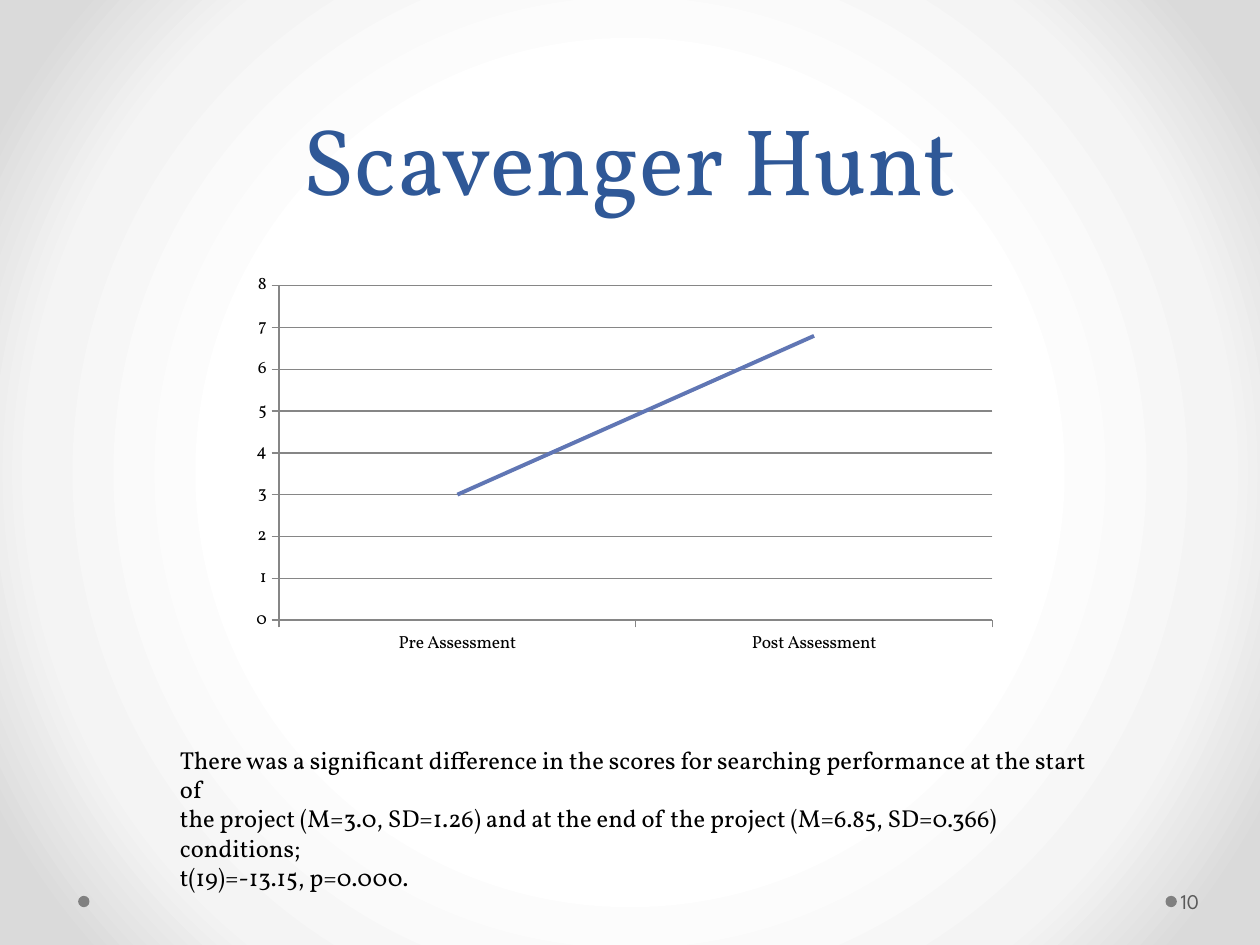
from lxml import etree
from pptx import Presentation
from pptx.chart.data import CategoryChartData
from pptx.dml.color import RGBColor
from pptx.enum.chart import XL_CHART_TYPE as CT, XL_TICK_MARK as TM
from pptx.enum.shapes import MSO_SHAPE as SH
from pptx.enum.text import MSO_ANCHOR as MA, PP_ALIGN as AL
from pptx.oxml import parse_xml
from pptx.oxml.ns import nsdecls, qn
from pptx.util import Inches, Pt

TITLE = "Scavenger Hunt"
FINDINGS = [
    "There was a significant difference in the scores for searching performance at the start of",
    "the project (M=3.0, SD=1.26) and at the end of the project (M=6.85, SD=0.366) conditions;",
    "t(19)=-13.15, p=0.000.",
]
PAGE = "10"
SCORES = {"Pre Assessment": 3, "Post Assessment": 6.8}
PLOT = {"x": 0.05, "y": 0.05, "w": 0.93, "h": 0.84}
BACKDROP = [(50, "FFFFFF"), (76, "F4F4F4"), (92, "DADADA")]
DOTS = [0.62, 9.25]
COLORS = {"title": "2F5897", "text": "000000", "page": "595959",
          "dot": "808080", "line": "6076B4", "axis": "868686"}
SERIF, SANS = "Vollkorn", "League Spartan"


def rgb(name):
    return RGBColor.from_string(COLORS[name])


def style(font, name, size, color):
    font.name, font.size = name, Pt(size)
    font.color.rgb = rgb(color)


def add_text(slide, box, lines, font, size, color, anchor=MA.TOP, align=AL.LEFT):
    tf = slide.shapes.add_textbox(*map(Inches, box)).text_frame
    tf.word_wrap, tf.vertical_anchor = True, anchor
    tf.text = "\n".join(lines)
    for p in tf.paragraphs:
        p.alignment = align
        for r in p.runs:
            style(r.font, font, size, color)
    return tf


def set_backdrop(slide):
    stops = "".join(f'<a:gs pos="{pos * 1000}"><a:srgbClr val="{c}"/></a:gs>'
                    for pos, c in BACKDROP)
    fill = slide.background.fill
    fill.gradient()
    old = slide.element.find(".//" + qn("a:gradFill"))
    old.getparent().replace(old, parse_xml(
        f'<a:gradFill {nsdecls("a")} rotWithShape="1"><a:gsLst>{stops}</a:gsLst>'
        '<a:path path="circle"><a:fillToRect l="50000" t="50000" r="50000" b="50000"/>'
        '</a:path></a:gradFill>'))


def add_score_chart(slide):
    data = CategoryChartData()
    data.categories = list(SCORES)
    data.add_series("Series 1", list(SCORES.values()))
    box = map(Inches, (1.91, 2.11, 6.09, 3.16))
    chart = slide.shapes.add_chart(CT.LINE, *box, data).chart
    chart.has_legend = chart.has_title = False
    style(chart.font, SERIF, 10, "text")

    plot = chart.plots[0]
    plot.vary_by_categories = False
    line = plot.series[0]
    line.smooth = False
    line.format.line.color.rgb = rgb("line")
    line.format.line.width = Pt(2.25)

    values = chart.value_axis
    values.minimum_scale, values.maximum_scale, values.major_unit = 0, 8, 1
    values.has_major_gridlines = True
    for axis in (chart.category_axis, values):
        axis.major_tick_mark, axis.minor_tick_mark = TM.OUTSIDE, TM.NONE
        axis.format.line.color.rgb = rgb("axis")
    values.major_gridlines.format.line.color.rgb = rgb("axis")

    area = chart.element.find(".//" + qn("c:plotArea"))
    layout = area.find(qn("c:layout"))
    if layout is None:
        layout = etree.Element(qn("c:layout"))
        area.insert(0, layout)
    manual = etree.SubElement(layout, qn("c:manualLayout"))
    settings = {"layoutTarget": "inner", "xMode": "edge", "yMode": "edge", **PLOT}
    for tag, val in settings.items():
        etree.SubElement(manual, qn("c:" + tag)).set("val", str(val))


def main():
    prs = Presentation()
    prs.slide_width, prs.slide_height = Inches(10), Inches(7.5)
    slide = prs.slides.add_slide(prs.slide_layouts[6])
    set_backdrop(slide)

    for x in DOTS:
        sp = slide.shapes.add_shape(SH.OVAL, *map(Inches, (x, 7.11, 0.09, 0.09)))
        sp.shadow.inherit = False
        sp.fill.solid()
        sp.fill.fore_color.rgb = rgb("dot")
        sp.line.fill.background()

    tf = add_text(slide, (0.5, 0, 9, 1.75), [TITLE], SERIF, 54, "title",
                  MA.BOTTOM, AL.CENTER)
    tf.paragraphs[0].line_spacing = Pt(58)
    add_score_chart(slide)
    add_text(slide, (1.33, 5.86, 7.45, 0.81), FINDINGS, SERIF, 14, "text")
    tf = add_text(slide, (9.34, 6.95, 0.61, 0.4), [PAGE], SANS, 12, "page", MA.MIDDLE)
    tf.margin_left, tf.margin_right = Inches(0.03), Inches(0.05)
    prs.save("out.pptx")


if __name__ == "__main__":
    main()
